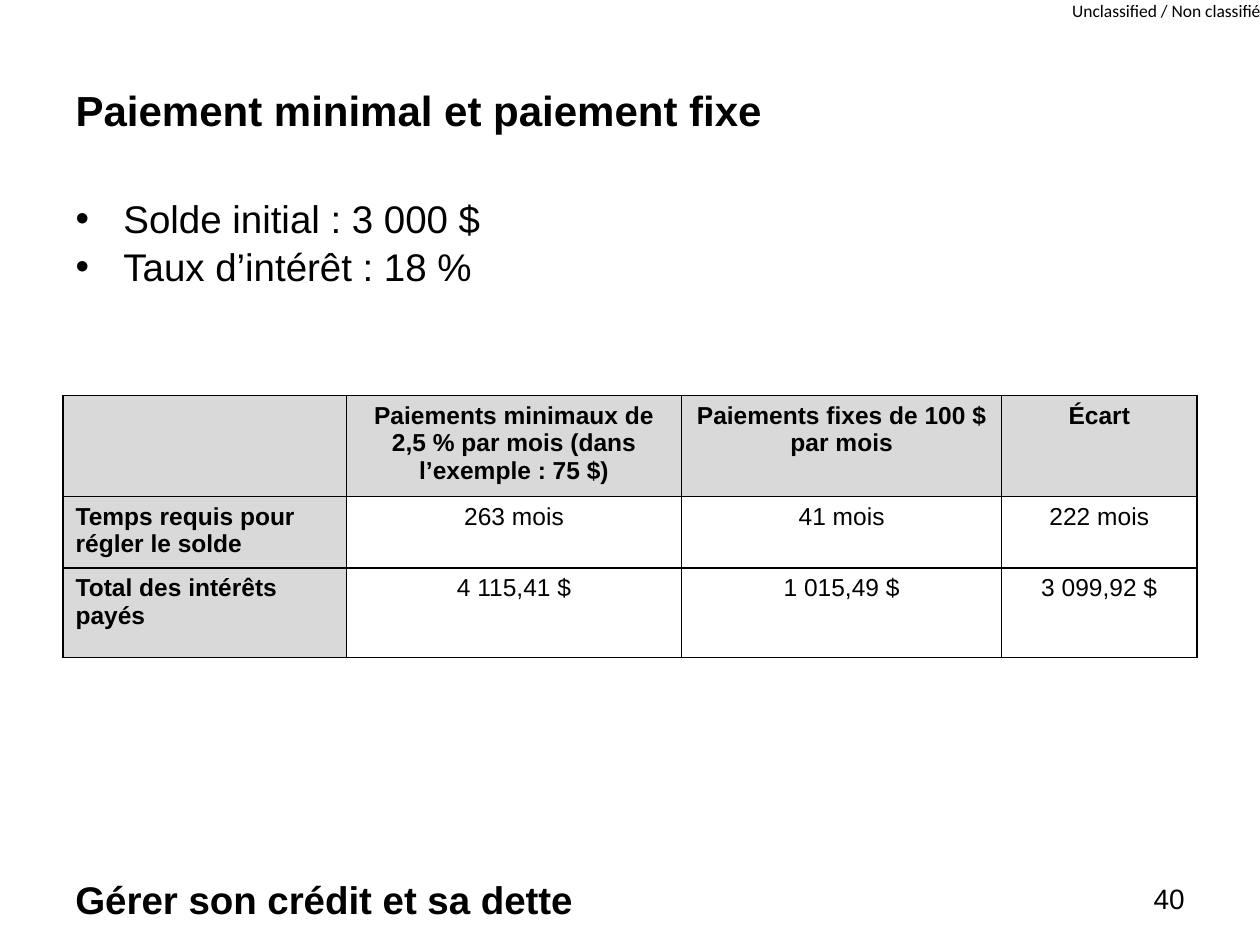
from lxml.etree import SubElement as Sub
from pptx import Presentation
from pptx.dml.color import RGBColor
from pptx.enum.text import MSO_ANCHOR as Anchor, MSO_AUTO_SIZE as Auto, PP_ALIGN as Align
from pptx.oxml.ns import qn
from pptx.util import Inches, Pt

# Content
TITLE = "Paiement minimal et paiement fixe"
FACTS = ["Solde initial : 3 000 $", "Taux d’intérêt : 18 %"]
ROWS = [
    ["", "Paiements minimaux de 2,5 % par mois (dans l’exemple : 75 $)",
     "Paiements fixes de 100 $ par mois", "Écart"],
    ["Temps requis pour régler le solde", "263 mois", "41 mois", "222 mois"],
    ["Total des intérêts payés", "4 115,41 $", "1 015,49 $", "3 099,92 $"],
]
COURSE = "Gérer son crédit et sa dette"
PAGE = "40"
LABEL = "Unclassified / Non classifié"

# Layout, in inches
LEFT, WIDE = 0.5, 9
COLS = [2.25, 2.66, 2.54, 1.55]
TALL = [0.8, 0.57, 0.71]
INK, GREY, WHITE = "000000", "D9D9D9", "FFFFFF"


def color(code):
    return RGBColor.from_string(code)


def style(par, size, bold=False, align=Align.LEFT, name="Arial"):
    look = {"size": Pt(size), "bold": bold, "name": name}
    for key, value in look.items():
        setattr(par.font, key, value)
    par.font.color.rgb = color(INK)
    par.alignment = align
    par.space_before = Pt(0)


def place(shape, x, y, w, h):
    spot = {"left": x, "top": y, "width": w, "height": h}
    for key, value in spot.items():
        setattr(shape, key, Inches(value))


def bullet(par, indent):
    props = par._p.get_or_add_pPr()
    props.set("marL", str(Inches(indent)))
    props.set("indent", str(-Inches(indent)))
    Sub(props, qn("a:buFont"), typeface="Arial")
    Sub(props, qn("a:buChar"), char="•")


def border(cell):
    props = cell._tc.get_or_add_tcPr()
    for side in ("lnL", "lnR", "lnT", "lnB"):
        line = Sub(props, qn("a:" + side), w=str(Pt(1)))
        Sub(Sub(line, qn("a:solidFill")), qn("a:srgbClr"), val=INK)


def note(slide, text, box, wrap=True, **look):
    frame = slide.shapes.add_textbox(*map(Inches, box)).text_frame
    frame.word_wrap = wrap
    frame.text = text
    style(frame.paragraphs[0], **look)
    return frame


deck = Presentation()
deck.slide_width, deck.slide_height = Inches(10), Inches(7.5)
slide = deck.slides.add_slide(deck.slide_layouts[1])
title, body = slide.placeholders

# Title
place(title, LEFT, 0.62, 8.33, 0.5)
title.text_frame.text = TITLE
title.text_frame.vertical_anchor = Anchor.MIDDLE
style(title.text_frame.paragraphs[0], 24, True)

# Opening facts
place(body, LEFT, 1.5, WIDE, 1)
frame = body.text_frame
frame.text = "\n".join(FACTS)
frame.auto_size = Auto.NONE
for i, par in enumerate(frame.paragraphs):
    bullet(par, 0.38)
    style(par, 22)
    par.space_before = Pt(i)

# Comparison table
grid = slide.shapes.add_table(
    len(ROWS), len(COLS), *map(Inches, (LEFT, 3.14, WIDE, sum(TALL)))).table
for col, width in zip(grid.columns, COLS):
    col.width = Inches(width)
for r, (row, height) in enumerate(zip(ROWS, TALL)):
    grid.rows[r].height = Inches(height)
    for c, text in enumerate(row):
        cell = grid.cell(r, c)
        head = r == 0 or c == 0
        border(cell)
        cell.fill.solid()
        cell.fill.fore_color.rgb = color(GREY if head else WHITE)
        cell.text = text
        style(cell.text_frame.paragraphs[0], 14, head,
              Align.CENTER if c else Align.LEFT)

# Footer and classification
note(slide, COURSE, (LEFT, 6.9, 8.33, 0.39), size=22, bold=True)
note(slide, PAGE, (8.96, 6.95, 0.54, 0.33), size=16, align=Align.RIGHT)
mark = note(slide, LABEL, (8.51, 0, 1.52, 0.17), wrap=False, size=10, name="Calibri")
for side in ("left", "top", "right", "bottom"):
    setattr(mark, "margin_" + side, 0)

deck.save("out.pptx")
